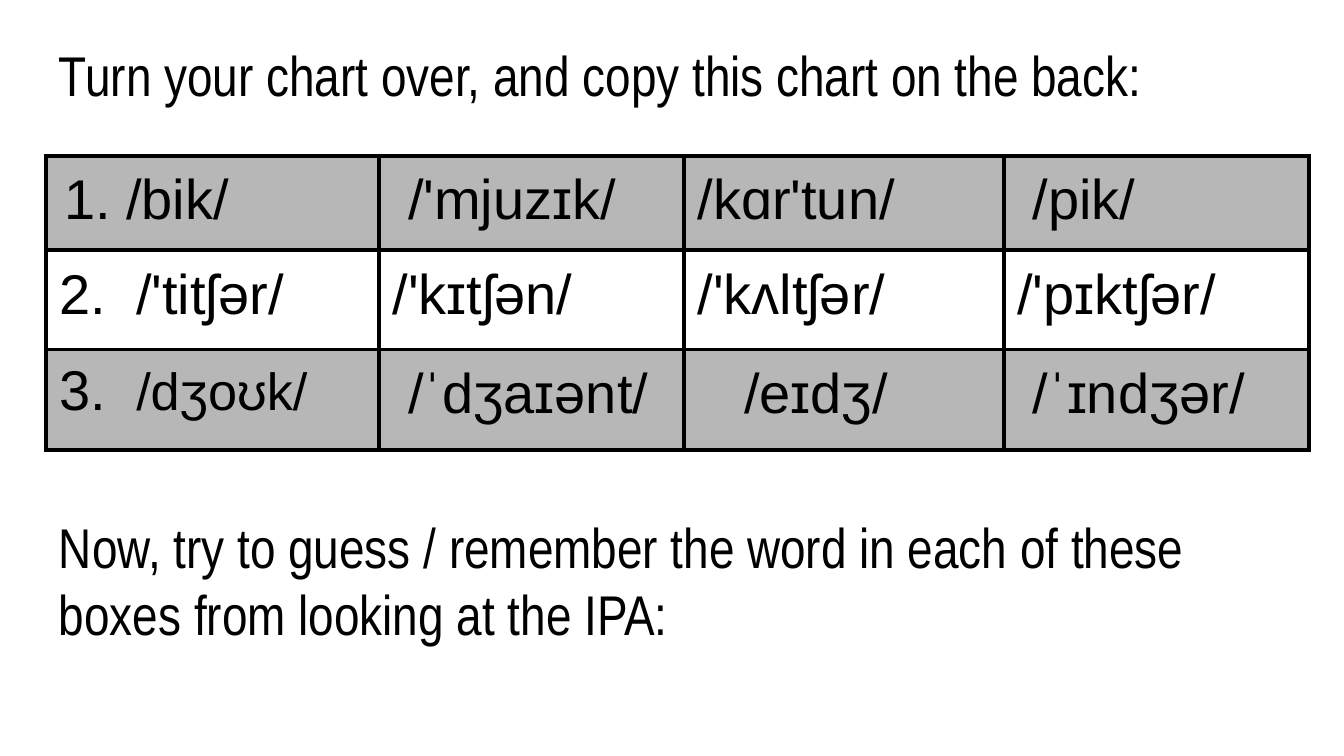
from dataclasses import dataclass

from lxml.etree import SubElement
from pptx import Presentation
from pptx.dml.color import RGBColor
from pptx.oxml.ns import qn
from pptx.util import Pt

INSTRUCTION = "Turn your chart over, and copy this chart on the back:"
FOLLOW_UP = "Now, try to guess / remember the word in each of these boxes from looking at the IPA:"
IPA_ROWS = [
    ["/bik/", "/'mjuzɪk/", "/kɑr'tun/", "/pik/"],
    ["/'titʃər/", "/'kɪtʃən/", "/'kʌltʃər/", "/'pɪktʃər/"],
    ["/dʒoʊk/", "/ˈdʒaɪənt/", "/eɪdʒ/", "/ˈɪndʒər/"],
]
INDENTS = [[36, 8.3, 0, 8.3], [41.3, 0, 0, 0], [41.3, 8.3, 25, 8.3]]
NUMBER_HANGS = [33, 41.3, 41.3]
COLUMN_WIDTHS = [178.6, 163.4, 171.4, 163.4]
ROW_HEIGHTS = [49, 53.3, 54]
LEFT, TABLE_TOP = 24.5, 83.5
PROMPT_WIDTH, INSET = 671, 7.2


@dataclass(frozen=True)
class Theme:
    ink: str = "000000"
    paper: str = "FFFFFF"
    band: str = "B7B7B7"
    prompt_font: str = "Arial Narrow"
    ipa_font: str = "Arial"
    size: float = 30
    small_size: float = 28
    border: float = 2.25


THEME = Theme()


def write(holder, text, *, font, size=THEME.size, color=THEME.ink, indent=0, number=None, hang=0):
    """Write one paragraph, optionally indented and numbered."""
    frame = holder.text_frame
    frame.word_wrap = True
    for side in ("left", "right", "top", "bottom"):
        setattr(holder if hasattr(holder, "margin_left") else frame, f"margin_{side}", Pt(INSET))
    paragraph = frame.paragraphs[0]
    run = paragraph.add_run()
    run.text = text
    run.font.name = font
    run.font.size = Pt(size)
    run.font.bold = False
    run.font.color.rgb = RGBColor.from_string(color)
    properties = paragraph._p.get_or_add_pPr()
    properties.set("marL", str(int(Pt(indent))))
    properties.set("indent", str(int(Pt(-hang))))
    if number:
        SubElement(properties, qn("a:buSzPct"), val=str(round(THEME.size / size * 100000)))
        SubElement(properties, qn("a:buFont"), typeface=font)
        SubElement(properties, qn("a:buAutoNum"), type="arabicPeriod", startAt=str(number))


def outline(cell):
    """Draw all four borders of a table cell."""
    properties = cell._tc.get_or_add_tcPr()
    for position, side in enumerate(("lnL", "lnR", "lnT", "lnB")):
        line = properties.makeelement(qn(f"a:{side}"), {"w": str(int(Pt(THEME.border)))})
        fill = SubElement(line, qn("a:solidFill"))
        SubElement(fill, qn("a:srgbClr"), val=THEME.ink)
        properties.insert(position, line)


def add_prompt(slide, text, top, height):
    """Add a full-width line of instructions."""
    prompt = slide.shapes.add_textbox(Pt(LEFT), Pt(top), Pt(PROMPT_WIDTH), Pt(height))
    write(prompt, text, font=THEME.prompt_font)


def add_ipa_table(slide):
    """Add the numbered table of IPA words."""
    table = slide.shapes.add_table(
        len(IPA_ROWS), len(COLUMN_WIDTHS), Pt(LEFT), Pt(TABLE_TOP),
        Pt(sum(COLUMN_WIDTHS)), Pt(sum(ROW_HEIGHTS)),
    ).table
    for column, width in zip(table.columns, COLUMN_WIDTHS):
        column.width = Pt(width)
    for row, words in enumerate(IPA_ROWS):
        table.rows[row].height = Pt(ROW_HEIGHTS[row])
        for column, word in enumerate(words):
            cell = table.cell(row, column)
            cell.fill.solid()
            cell.fill.fore_color.rgb = RGBColor.from_string(THEME.paper if row % 2 else THEME.band)
            write(
                cell, word, font=THEME.ipa_font, indent=INDENTS[row][column],
                size=THEME.small_size if word == "/dʒoʊk/" else THEME.size,
                number=row + 1 if column == 0 else None,
                hang=NUMBER_HANGS[row] if column == 0 else 0,
            )
            outline(cell)


def main():
    """Build and save the slide."""
    deck = Presentation()
    deck.slide_width, deck.slide_height = Pt(720), Pt(405)
    slide = deck.slides.add_slide(deck.slide_layouts[6])
    add_prompt(slide, INSTRUCTION, 14.4, 50)
    add_ipa_table(slide)
    add_prompt(slide, FOLLOW_UP, 267.3, 86)
    deck.save("out.pptx")


if __name__ == "__main__":
    main()
